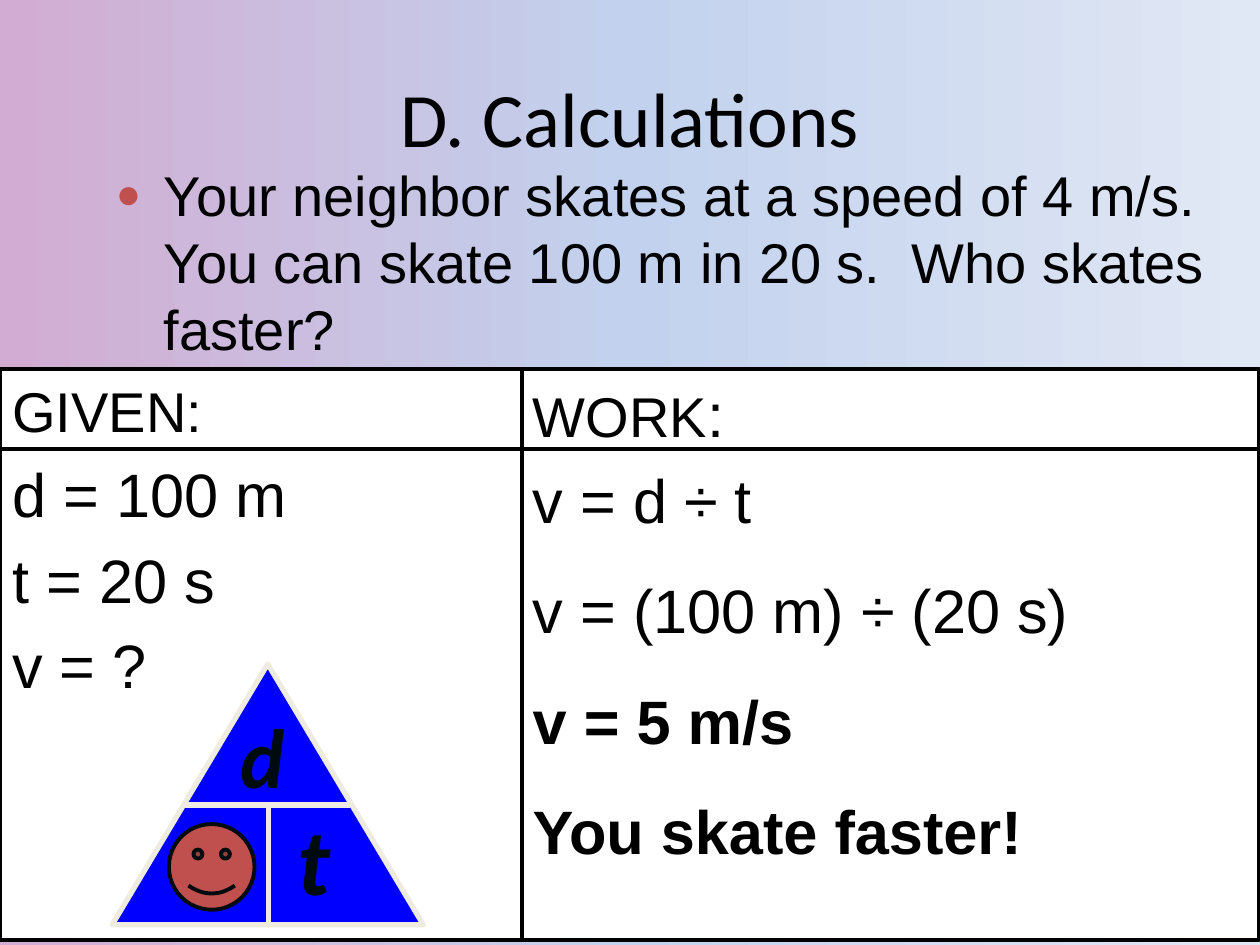
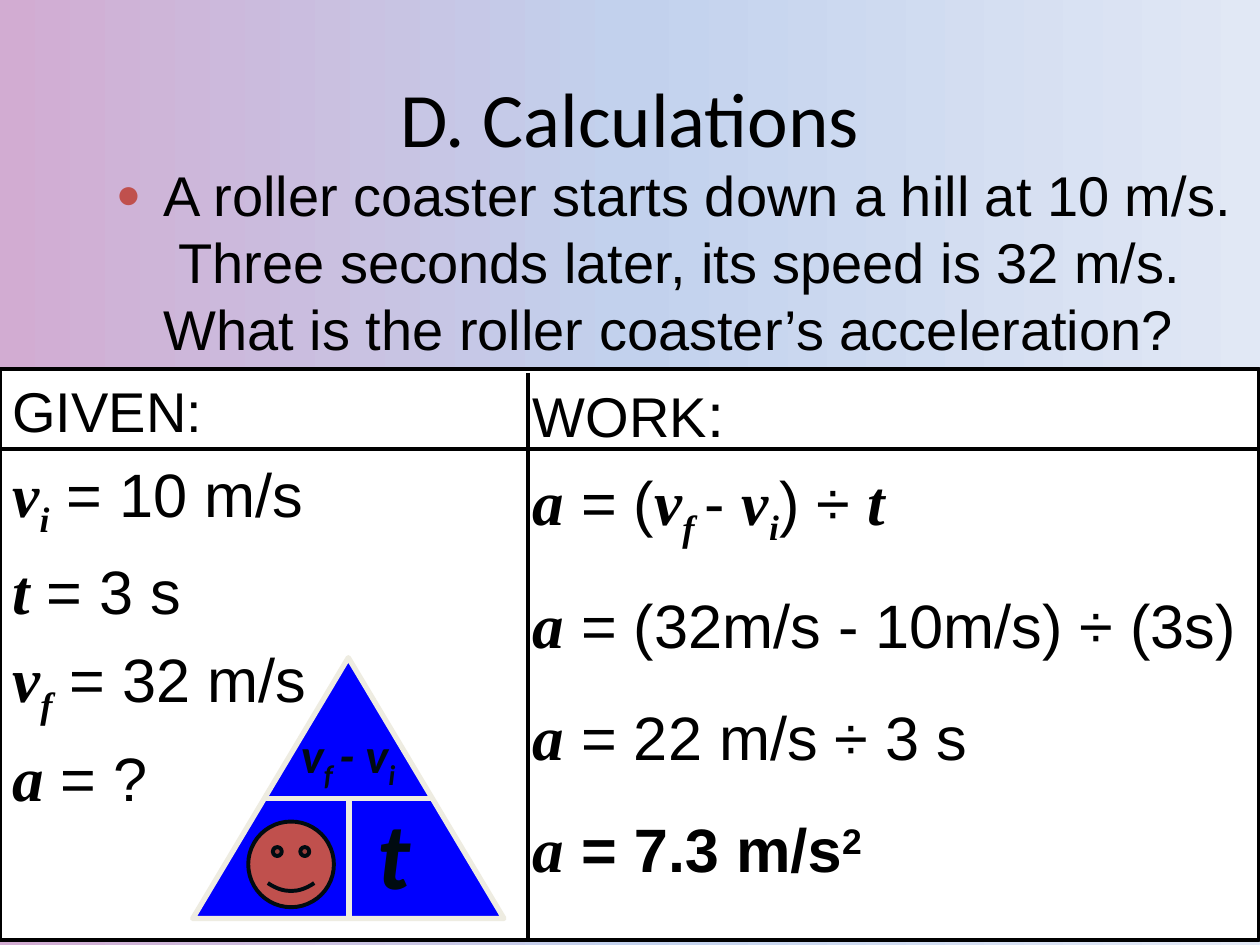
from dataclasses import dataclass
from functools import partial
from typing import NamedTuple

from lxml import etree
from pptx import Presentation
from pptx.dml.color import RGBColor
from pptx.enum.shapes import MSO_CONNECTOR, MSO_SHAPE
from pptx.enum.text import MSO_ANCHOR, MSO_AUTO_SIZE, PP_ALIGN
from pptx.oxml import parse_xml
from pptx.oxml.ns import nsdecls, qn
from pptx.util import Inches, Pt

BLACK = RGBColor(0x00, 0x00, 0x00)
WHITE = RGBColor(0xFF, 0xFF, 0xFF)
BLUE = RGBColor(0x00, 0x00, 0xFF)
CREAM = RGBColor(0xEE, 0xEC, 0xE1)
RED = RGBColor(0xC0, 0x50, 0x4D)
INK = RGBColor(0x00, 0x0B, 0x10)
BACKDROP = [
    (0, RGBColor(0xD2, 0xAC, 0xD2)),
    (50, RGBColor(0xC2, 0xD1, 0xED)),
    (100, RGBColor(0xE1, 0xE8, 0xF5)),
]
PANEL_TOP, HEADER_LINE = 2.93, 3.56
WORK_LEFT = 4.13


class Run(NamedTuple):
    text: str
    size: int = 35
    font: str = "Arial"
    bold: bool = False
    italic: bool = False
    base: int = 0
    color: RGBColor = BLACK


# Run styles: algebraic symbols, their subscripts, and triangle letters
symbol = partial(Run, size=36, font="Times New Roman", bold=True, italic=True)
index = partial(symbol, base=-25)
letter = partial(Run, font="Calibri", bold=True, italic=True, color=INK)
Line = list[Run]


@dataclass
class Label:
    left: float
    top: float
    width: float
    height: float
    runs: Line


@dataclass
class Problem:
    question: str
    given: list[Line]
    work: list[Line]
    divider: tuple[float, float]
    triangle: tuple[float, float]
    labels: list[Label]
    face: tuple[float, float]


T_LABEL = Label(1.37, 1.04, 0.41, 1, [letter("t", size=54)])

PROBLEMS = [
    Problem(
        question="Your neighbor skates at a speed of 4 m/s.  "
                 "You can skate 100 m in 20 s.  Who skates faster?",
        given=[[Run("d = 100 m")], [Run("t = 20 s")], [Run("v = ?")]],
        work=[
            [Run("v = d ÷ t")],
            [Run("v = (100 m) ÷ (20 s)")],
            [Run("v = 5 m/s", bold=True)],
            [Run("You skate faster!", bold=True)],
        ],
        divider=(4.14, 2.93),
        triangle=(0.89, 5.27),
        labels=[Label(0.92, 0.27, 0.53, 0.9, [letter("d", size=48)]), T_LABEL],
        face=(1.34, 6.54),
    ),
    Problem(
        question="A roller coaster starts down a hill at 10 m/s.  "
                 "Three seconds later, its speed is 32 m/s.  "
                 "What is the roller coaster’s acceleration?",
        given=[
            [symbol("v", size=35), index("i", size=35), Run(" = 10 m/s")],
            [symbol("t"), Run(" = 3 s")],
            [symbol("v"), index("f"), Run(" = 32 m/s")],
            [symbol("a"), Run(" = ?")],
        ],
        work=[
            [symbol("a"), Run(" = ("), symbol("v"), index("f"),
             Run(" ", base=-25), Run("- "), symbol("v", size=35),
             index("i", size=35), Run(") ÷ "), symbol("t")],
            [symbol("a"), Run(" = (32m/s - 10m/s) ÷ (3s)")],
            [symbol("a"), Run(" = 22 m/s ÷ 3 s")],
            [symbol("a"), Run(" = 7.3 m/s", bold=True),
             Run("2", bold=True, base=30)],
        ],
        divider=(4.19, 2.96),
        triangle=(1.53, 5.22),
        labels=[
            Label(0.76, 0.48, 1.02, 1.37, [
                letter("v", size=28), letter("f ", size=28, base=-25),
                letter("- v", size=28), letter("i", size=28, base=-25)]),
            T_LABEL,
        ],
        face=(1.97, 6.52),
    ),
]


def write(paragraph, text: str, *, size: int, font: str, bold=False,
          italic=False, base=0, color=BLACK) -> None:
    run = paragraph.add_run()
    run.text = text
    run.font.size, run.font.name = Pt(size), font
    run.font.bold, run.font.italic = bold, italic
    run.font.color.rgb = color
    if base:
        run._r.get_or_add_rPr().set("baseline", str(base * 1000))


def place(shape, left: float, top: float, width: float, height: float) -> None:
    shape.left, shape.top = Inches(left), Inches(top)
    shape.width, shape.height = Inches(width), Inches(height)


def add_text(shapes, box: tuple, lines: list[Line], gaps: list[float],
             wrap: bool = True) -> None:
    frame = shapes.add_textbox(*map(Inches, box)).text_frame
    frame.word_wrap = wrap
    for number, (line, gap) in enumerate(zip(lines, gaps)):
        paragraph = frame.add_paragraph() if number else frame.paragraphs[0]
        paragraph.space_before = Pt(gap)
        for run in line:
            write(paragraph, **run._asdict())


def add_shape(shapes, kind, box: tuple, fill: RGBColor, line: RGBColor,
              weight: float) -> None:
    shape = shapes.add_shape(kind, *map(Inches, box))
    shape.shadow.inherit = False
    shape.fill.solid()
    shape.fill.fore_color.rgb = fill
    shape.line.color.rgb, shape.line.width = line, Pt(weight)


def add_rule(shapes, ends: tuple, color: RGBColor, weight: float) -> None:
    rule = shapes.add_connector(MSO_CONNECTOR.STRAIGHT, *map(Inches, ends))
    rule.line.color.rgb, rule.line.width = color, Pt(weight)
    etree.SubElement(rule._element.spPr, qn("a:effectLst"))


def set_backdrop(master) -> None:
    fill = master.background.fill
    fill.gradient()
    fill.gradient_angle = 0
    stops = "".join(f'<a:gs pos="{at * 1000}"><a:srgbClr val="{color}"/></a:gs>'
                    for at, color in BACKDROP)
    gradient = master._element.find(".//" + qn("a:gradFill"))
    gradient.replace(gradient.find(qn("a:gsLst")),
                     parse_xml(f'<a:gsLst {nsdecls("a")}>{stops}</a:gsLst>'))


def add_heading(slide) -> None:
    title = slide.shapes.title
    place(title, 0.5, 0.3, 9, 1.25)
    title.text_frame.vertical_anchor = MSO_ANCHOR.MIDDLE
    paragraph = title.text_frame.paragraphs[0]
    paragraph.alignment = PP_ALIGN.CENTER
    write(paragraph, "D. Calculations", size=44, font="Calibri")


def add_question(slide, question: str) -> None:
    body = slide.placeholders[1]
    place(body, 0.82, 1.22, 9.18, 1.72)
    frame = body.text_frame
    frame.auto_size = MSO_AUTO_SIZE.NONE
    frame.vertical_anchor = MSO_ANCHOR.TOP
    paragraph = frame.paragraphs[0]
    paragraph.space_before = Pt(0)
    write(paragraph, question, size=32, font="Arial")
    # Round red bullet with a hanging indent
    props = paragraph._p.get_or_add_pPr()
    props.set("marL", str(Inches(0.38)))
    props.set("indent", str(Inches(-0.38)))
    color = etree.SubElement(props, qn("a:buClr"))
    etree.SubElement(color, qn("a:srgbClr"), val=str(RED))
    etree.SubElement(props, qn("a:buSzPct"), val="75000")
    etree.SubElement(props, qn("a:buFont"), typeface="Arial")
    etree.SubElement(props, qn("a:buChar"), char="●")


def add_panel(slide, problem: Problem) -> None:
    shapes = slide.shapes
    add_shape(shapes, MSO_SHAPE.RECTANGLE, (0, PANEL_TOP, 9.99, 4.53),
              WHITE, BLACK, 2.25)
    add_text(shapes, (0, 2.94, WORK_LEFT, 2.84),
             [[Run("GIVEN:", size=32)], *problem.given],
             [0] + [7] * len(problem.given))
    add_text(shapes, (WORK_LEFT, 2.94, 10 - WORK_LEFT, 3.86),
             [[Run("WORK", size=32), Run(":")], *problem.work],
             [0, 7] + [21] * (len(problem.work) - 1))
    x, top = problem.divider
    add_rule(shapes, (x, top, x, top + 4.52), BLACK, 2.25)
    add_rule(shapes, (0, HEADER_LINE, 10, HEADER_LINE), BLACK, 2.25)


def add_triangle(slide, problem: Problem) -> None:
    x, y = problem.triangle
    parts = slide.shapes.add_group_shape().shapes
    add_shape(parts, MSO_SHAPE.ISOSCELES_TRIANGLE, (x, y, 2.47, 2.07),
              BLUE, CREAM, 3)
    add_rule(parts, (x + 0.56, y + 1.12, x + 1.89, y + 1.12), CREAM, 3)
    add_rule(parts, (x + 1.24, y + 1.13, x + 1.24, y + 2.06), CREAM, 3)
    for label in problem.labels:
        box = (x + label.left, y + label.top, label.width, label.height)
        add_text(parts, box, [label.runs], [0], wrap=False)
    # The face covers the unknown quantity
    add_shape(slide.shapes, MSO_SHAPE.SMILEY_FACE, (*problem.face, 0.68, 0.68),
              RED, INK, 2.25)


def main() -> None:
    deck = Presentation()
    deck.slide_width, deck.slide_height = Inches(10), Inches(7.5)
    set_backdrop(deck.slide_master)
    for problem in PROBLEMS:
        slide = deck.slides.add_slide(deck.slide_layouts[1])
        add_heading(slide)
        add_question(slide, problem.question)
        add_panel(slide, problem)
        add_triangle(slide, problem)
    deck.save("out.pptx")


if __name__ == "__main__":
    main()
